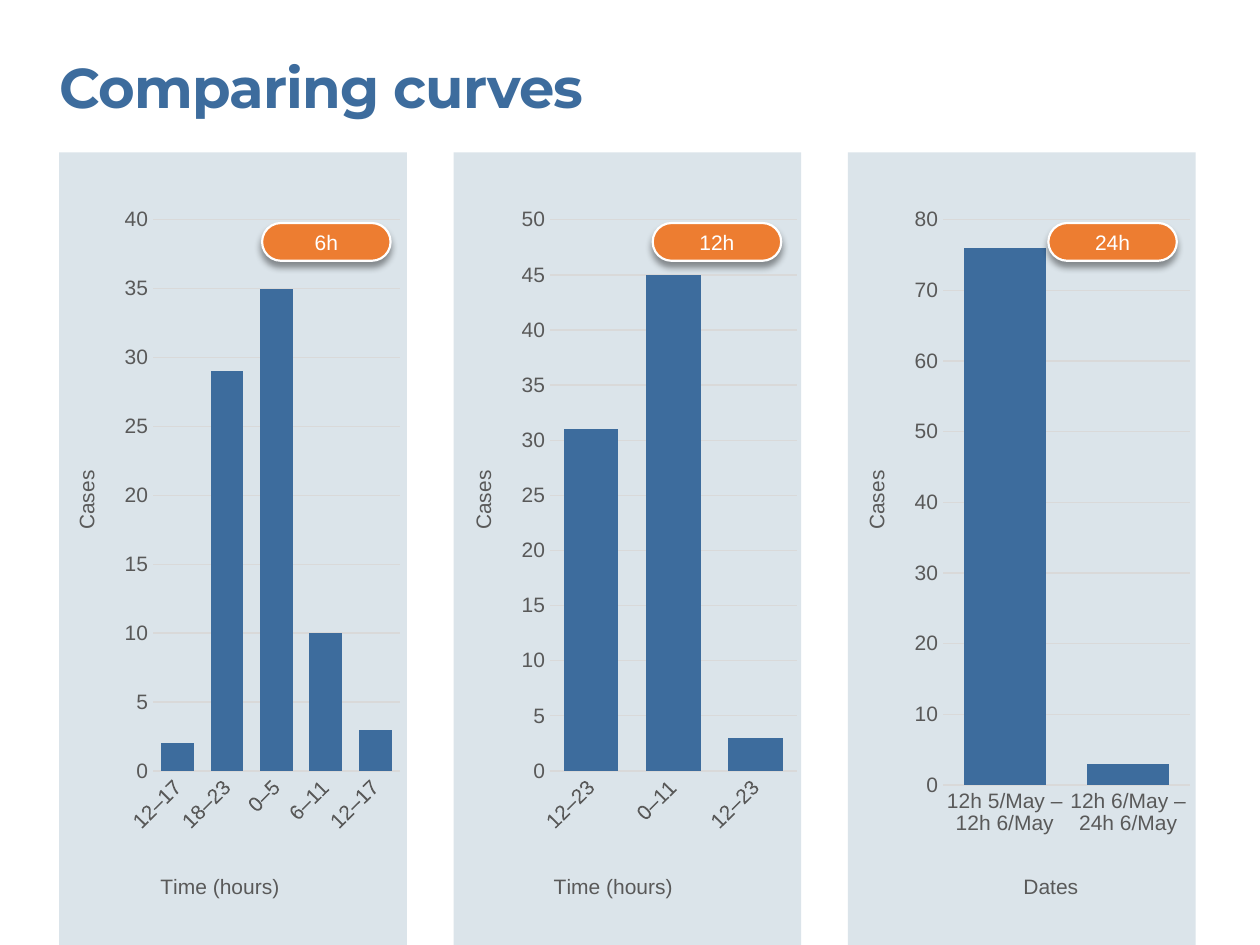
from lxml import etree
from pptx import Presentation
from pptx.chart.data import CategoryChartData
from pptx.dml.color import RGBColor
from pptx.enum.chart import XL_CHART_TYPE, XL_TICK_MARK
from pptx.enum.shapes import MSO_SHAPE
from pptx.enum.text import MSO_ANCHOR, MSO_AUTO_SIZE, PP_ALIGN
from pptx.oxml.ns import qn
from pptx.util import Inches, Pt

COLUMN = XL_CHART_TYPE.COLUMN_CLUSTERED
NO_TICK = XL_TICK_MARK.NONE
RECTANGLE = MSO_SHAPE.RECTANGLE
PILL = MSO_SHAPE.ROUNDED_RECTANGLE
MIDDLE = MSO_ANCHOR.MIDDLE
CENTER = PP_ALIGN.CENTER
FIT_SHAPE = MSO_AUTO_SIZE.SHAPE_TO_FIT_TEXT

BLUE, PALE, ORANGE = "3D6C9D", "DBE4EA", "ED7D31"
WHITE, GRAY, GRID = "FFFFFF", "595959", "D9D9D9"

TITLE = "Comparing curves"
PANELS = [
    {"interval": "6h", "pill_left": 2.08, "chart_left": 0.47,
     "categories": ["12–17", "18–23", "0–5", "6–11", "12–17"],
     "cases": [2, 29, 35, 10, 3], "maximum": 40, "step": 5,
     "axis": "Time (hours)", "axis_x": 0.28, "label_angle": -45, "plot_height": 0.78},
    {"interval": "12h", "pill_left": 5.18, "chart_left": 3.62,
     "categories": ["12–23", "0–11", "12–23"],
     "cases": [31, 45, 3], "maximum": 50, "step": 5,
     "axis": "Time (hours)", "axis_x": 0.27, "label_angle": -45, "plot_height": 0.78},
    {"interval": "24h", "pill_left": 8.32, "chart_left": 6.74,
     "categories": ["12h 5/May – 12h 6/May", "12h 6/May – 24h 6/May"],
     "cases": [76, 3], "maximum": 80, "step": 10,
     "axis": "Dates", "axis_x": 0.49, "label_angle": 0, "plot_height": 0.8},
]
MARGIN, PANEL_WIDTH, PANEL_STEP = 0.47, 2.76, 3.13


def color(value):
    return RGBColor.from_string(value)


def style_font(font, size, value, name="Arial", bold=False):
    font.name, font.size, font.bold = name, Pt(size), bold
    font.color.rgb = color(value)


def rotate_text(body, degrees):
    body.set("rot", str(degrees * 60000))
    body.set("vert", "horz")


def set_layout(parent, **values):
    layout = parent.find(qn("c:layout"))
    if layout is None:
        layout = etree.Element(qn("c:layout"))
        parent.insert(0, layout)
    manual = etree.SubElement(layout, qn("c:manualLayout"))
    settings = {"xMode": "edge", "yMode": "edge", **values}
    if "w" in values:
        settings = {"layoutTarget": "inner", **settings}
    for tag, value in settings.items():
        etree.SubElement(manual, qn(f"c:{tag}")).set("val", str(value))


def style_axis(axis, title, x, y, title_angle, label_angle):
    axis.major_tick_mark = axis.minor_tick_mark = NO_TICK
    style_font(axis.tick_labels.font, 12, GRAY)
    rotate_text(axis._element.find(qn("c:txPr")).find(qn("a:bodyPr")), label_angle)
    frame = axis.axis_title.text_frame
    run = frame.paragraphs[0].add_run()
    run.text = title
    style_font(run.font, 12, GRAY)
    rotate_text(frame._txBody.bodyPr, title_angle)
    set_layout(axis.axis_title._element, x=x, y=y)


def add_panel(slide, left):
    panel = slide.shapes.add_shape(
        RECTANGLE, Inches(left), Inches(1.21), Inches(PANEL_WIDTH), Inches(6.29))
    panel.shadow.inherit = False
    panel.fill.solid()
    panel.fill.fore_color.rgb = color(PALE)
    panel.line.fill.background()


def add_title(slide):
    box = slide.shapes.add_textbox(Inches(MARGIN), Inches(0.42), Inches(9.02), Inches(0.54))
    frame = box.text_frame
    frame.word_wrap = True
    frame.auto_size = FIT_SHAPE
    frame.margin_left = frame.margin_right = frame.margin_top = frame.margin_bottom = 0
    run = frame.paragraphs[0].add_run()
    run.text = TITLE
    style_font(run.font, 32, BLUE, "Montserrat", True)
    run.font._element.set("spc", "-50")


def add_cases_chart(slide, panel):
    data = CategoryChartData()
    data.categories = panel["categories"]
    data.add_series("Series 1", panel["cases"])
    chart = slide.shapes.add_chart(
        COLUMN, Inches(panel["chart_left"]), Inches(1.52),
        Inches(PANEL_WIDTH), Inches(5.66), data).chart
    chart.has_legend = chart.has_title = False
    style_font(chart.font, 10, "000000")
    plot = chart.plots[0]
    plot.gap_width = 50
    plot.vary_by_categories = False
    bars = plot.series[0].format.fill
    bars.solid()
    bars.fore_color.rgb = color(BLUE)

    categories, values = chart.category_axis, chart.value_axis
    style_axis(categories, panel["axis"], panel["axis_x"], 0.96, 0, panel["label_angle"])
    style_axis(values, "Cases", 0.03, 0.39, -90, 0)
    values.minimum_scale, values.maximum_scale = 0, panel["maximum"]
    values.major_unit = panel["step"]
    values.format.line.fill.background()
    for line in (categories.format.line, values.major_gridlines.format.line):
        line.color.rgb = color(GRID)
        line.width = Pt(0.75)
    plot_area = chart._chartSpace.chart.plotArea
    set_layout(plot_area, x=0.27, y=0.04, w=0.71, h=panel["plot_height"])


def add_interval(slide, panel):
    pill = slide.shapes.add_shape(
        PILL, Inches(panel["pill_left"]), Inches(1.77), Inches(1.02), Inches(0.3))
    pill.adjustments[0] = 0.5
    pill.fill.solid()
    pill.fill.fore_color.rgb = color(ORANGE)
    pill.line.color.rgb = color(WHITE)
    pill.line.width = Pt(1.25)
    pill.shadow.inherit = False
    effects = pill._element.spPr.find(qn("a:effectLst"))
    shadow = etree.SubElement(
        effects, qn("a:outerShdw"), blurRad=str(Pt(4)), dist=str(Pt(3)),
        dir="5400000", rotWithShape="0")
    shade = etree.SubElement(shadow, qn("a:srgbClr"), val="000000")
    etree.SubElement(shade, qn("a:alpha"), val="40000")
    frame = pill.text_frame
    frame.vertical_anchor = MIDDLE
    paragraph = frame.paragraphs[0]
    paragraph.alignment = CENTER
    run = paragraph.add_run()
    run.text = panel["interval"]
    style_font(run.font, 12, WHITE)


def main():
    presentation = Presentation()
    presentation.slide_width, presentation.slide_height = Inches(10), Inches(7.5)
    slide = presentation.slides.add_slide(presentation.slide_layouts[6])
    for index in range(len(PANELS)):
        add_panel(slide, MARGIN + index * PANEL_STEP)
    add_title(slide)
    for panel in PANELS:
        add_cases_chart(slide, panel)
    for panel in PANELS:
        add_interval(slide, panel)
    presentation.save("out.pptx")


if __name__ == "__main__":
    main()
